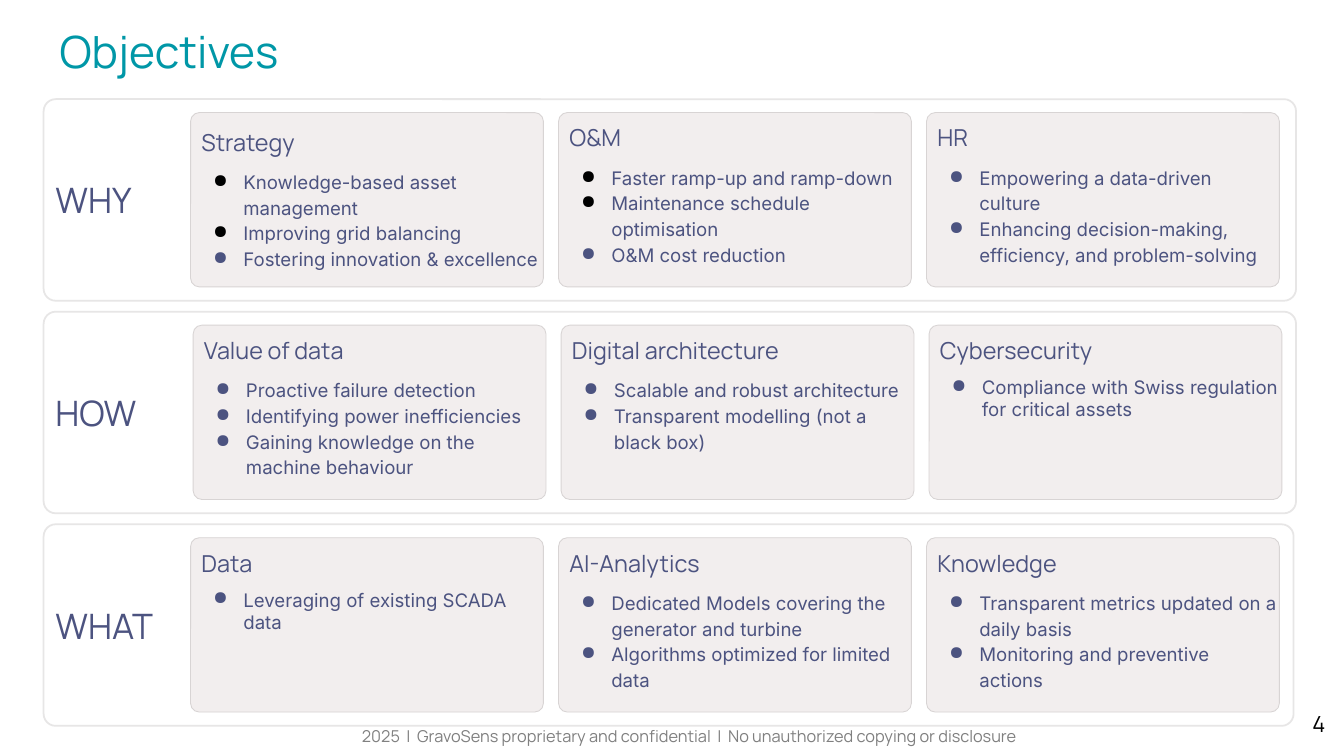
"""Build the Objectives slide: three rows of panels with three cards each."""
from lxml import etree
from pptx import Presentation
from pptx.dml.color import RGBColor
from pptx.enum.shapes import MSO_SHAPE
from pptx.enum.text import MSO_ANCHOR, PP_ALIGN
from pptx.oxml.ns import qn
from pptx.util import Pt

ROUNDED = MSO_SHAPE.ROUNDED_RECTANGLE
TOP, MIDDLE = MSO_ANCHOR.TOP, MSO_ANCHOR.MIDDLE
LEFT, CENTER, RIGHT = PP_ALIGN.LEFT, PP_ALIGN.CENTER, PP_ALIGN.RIGHT

BLACK = RGBColor(0x00, 0x00, 0x00)
GREY = RGBColor(0x80, 0x80, 0x80)
TEAL = RGBColor(0x00, 0x97, 0xA7)
INDIGO = RGBColor(0x4C, 0x53, 0x80)
CARD_FILL = RGBColor(0xF2, 0xEE, 0xEE)
CARD_LINE = RGBColor(0xD8, 0xD4, 0xD4)
PANEL_LINE = RGBColor(0xE7, 0xE6, 0xE6)

HEADING_FONT, BODY_FONT = "Manrope", "Inter"
PANEL_LEFT, PANEL_TOP, PANEL_HEIGHT, ROW_PITCH = 37.4, 85, 172.8, 182.2
CARD_WIDTH, CARD_HEIGHT, CARD_PITCH, CARD_INSET = 302.4, 149.4, 315.4, 11.5
WIDE_SPACING = 1.15

# Row: label, panel width, left edge of the first card, cards.
# Card: heading, heading spacing, bullet spacing, number of black bullets, items.
ROWS = [
    ("WHY", 1073.5, 163.4, [
        ("Strategy", WIDE_SPACING, WIDE_SPACING, 2, [
            "Knowledge-based asset management",
            "Improving grid balancing",
            "Fostering innovation & excellence"]),
        ("O&M", 1, WIDE_SPACING, 2, [
            "Faster ramp-up and ramp-down",
            "Maintenance schedule optimisation",
            "O&M cost reduction"]),
        ("HR", 1, WIDE_SPACING, 0, [
            "Empowering a data-driven culture",
            "Enhancing decision-making, efficiency, and problem-solving"]),
    ]),
    ("HOW", 1073.5, 165.6, [
        ("Value of data", 1, WIDE_SPACING, 0, [
            "Proactive failure detection",
            "Identifying power inefficiencies",
            "Gaining knowledge on the machine behaviour"]),
        ("Digital architecture", 1, WIDE_SPACING, 0, [
            "Scalable and robust architecture",
            "Transparent modelling (not a black box)"]),
        ("Cybersecurity", 1, 1, 0, [
            "Compliance with Swiss regulation for critical assets"]),
    ]),
    ("WHAT", 1071.4, 163.4, [
        ("Data", 1, 1, 0, ["Leveraging of existing SCADA data"]),
        ("AI-Analytics", 1, WIDE_SPACING, 0, [
            "Dedicated Models covering the generator and turbine",
            "Algorithms optimized for limited data"]),
        ("Knowledge", 1, WIDE_SPACING, 0, [
            "Transparent metrics updated on a daily basis",
            "Monitoring and preventive actions"]),
    ]),
]


def set_frame(frame, anchor, left, top, right, bottom):
    """Set wrapping, anchor and margins of a text frame."""
    frame.word_wrap = True
    frame.vertical_anchor = anchor
    frame.margin_left, frame.margin_top = Pt(left), Pt(top)
    frame.margin_right, frame.margin_bottom = Pt(right), Pt(bottom)


def write(paragraph, text, size, color, font_name=HEADING_FONT, align=LEFT, spacing=1):
    """Fill a paragraph with text in one format."""
    paragraph.text = text
    paragraph.alignment = align
    paragraph.line_spacing = spacing
    font = paragraph.font
    font.name, font.size, font.bold = font_name, Pt(size), False
    font.color.rgb = color


def add_bullet(paragraph, color):
    """Give a paragraph a coloured round bullet and a hanging indent."""
    properties = paragraph._p.get_or_add_pPr()
    properties.set("marL", str(Pt(36)))
    properties.set("indent", str(Pt(-26)))
    bullet_color = etree.SubElement(properties, qn("a:buClr"))
    etree.SubElement(bullet_color, qn("a:srgbClr"), val=str(color))
    etree.SubElement(properties, qn("a:buChar"), char="●")


def add_box(shapes, left, top, width, height, line_color, line_width, radius):
    """Add a rounded rectangle with an outline and no shadow."""
    shape = shapes.add_shape(ROUNDED, Pt(left), Pt(top), Pt(width), Pt(height))
    shape.adjustments[0] = radius
    shape.shadow.inherit = False
    shape.fill.background()
    shape.line.color.rgb = line_color
    shape.line.width = Pt(line_width)
    return shape


def add_panel(shapes, top, width, label):
    """Add the outlined panel of a row with its label."""
    panel = add_box(shapes, PANEL_LEFT, top, width, PANEL_HEIGHT, PANEL_LINE, 1.5, 0.06)
    set_frame(panel.text_frame, MIDDLE, 7.2, 7.2, 7.2, 7.2)
    write(panel.text_frame.paragraphs[0], label, 30, INDIGO)


def add_card(shapes, left, top, heading, heading_spacing, spacing, black_count, items):
    """Add a filled card with a heading and a bullet list."""
    card = add_box(shapes, left, top, CARD_WIDTH, CARD_HEIGHT, CARD_LINE, 0.75, 0.05)
    card.fill.solid()
    card.fill.fore_color.rgb = CARD_FILL
    frame = card.text_frame
    set_frame(frame, TOP, 7.2, 7.2, 0, 0)
    write(frame.paragraphs[0], heading, 20, INDIGO, spacing=heading_spacing)
    for index, item in enumerate(items):
        paragraph = frame.add_paragraph()
        add_bullet(paragraph, BLACK if index < black_count else INDIGO)
        write(paragraph, item, 16, INDIGO, BODY_FONT, spacing=spacing)
        paragraph.space_before = Pt(0 if index else 10)


def add_label(slide, left, top, width, height, margin, text, size, color, align):
    """Add a one-line text box."""
    box = slide.shapes.add_textbox(Pt(left), Pt(top), Pt(width), Pt(height))
    set_frame(box.text_frame, TOP, margin, margin, margin, margin)
    write(box.text_frame.paragraphs[0], text, size, color, align=align)


def set_title(slide, text):
    """Place and format the title placeholder."""
    title = slide.shapes.title
    title.left, title.top, title.width, title.height = Pt(39.6), Pt(9.4), Pt(1073.5), Pt(72)
    set_frame(title.text_frame, TOP, 11.5, 11.5, 11.5, 11.5)
    write(title.text_frame.paragraphs[0], text, 38, TEAL)


def main():
    """Build and save the slide."""
    presentation = Presentation()
    presentation.slide_width, presentation.slide_height = Pt(1152), Pt(648)
    slide = presentation.slides.add_slide(presentation.slide_layouts[5])
    set_title(slide, "Objectives")
    add_label(slide, 108.7, 615.6, 964.8, 31.7, 7.2,
              "2025  |  GravoSens proprietary and confidential  |  "
              "No unauthorized copying or disclosure", 14, GREY, CENTER)
    add_label(slide, 1077.8, 598.3, 69.1, 49.7, 10.8, "4", 19, BLACK, RIGHT)
    for row, (label, width, first_left, cards) in enumerate(ROWS):
        top = PANEL_TOP + row * ROW_PITCH
        shapes = slide.shapes.add_group_shape().shapes
        add_panel(shapes, top, width, label)
        for column, card in enumerate(cards):
            add_card(shapes, first_left + column * CARD_PITCH, top + CARD_INSET, *card)
    presentation.save("out.pptx")


if __name__ == "__main__":
    main()
